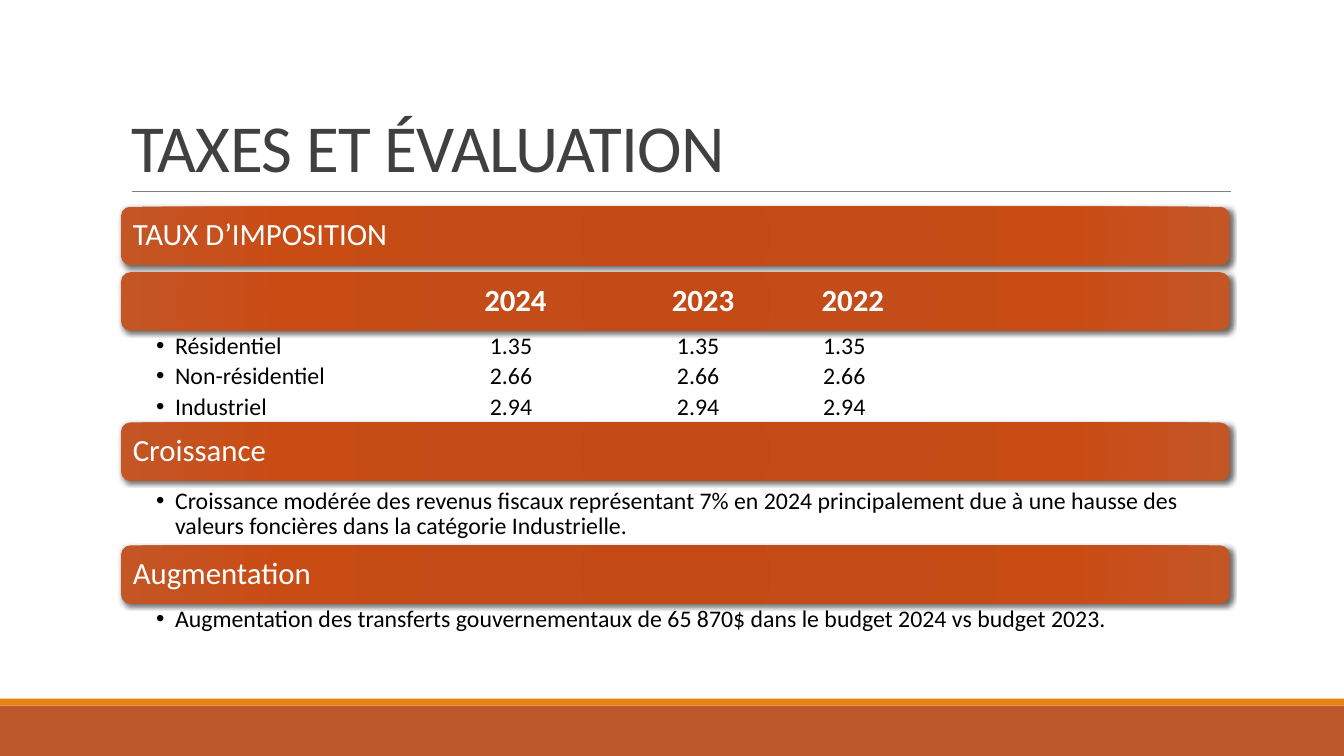
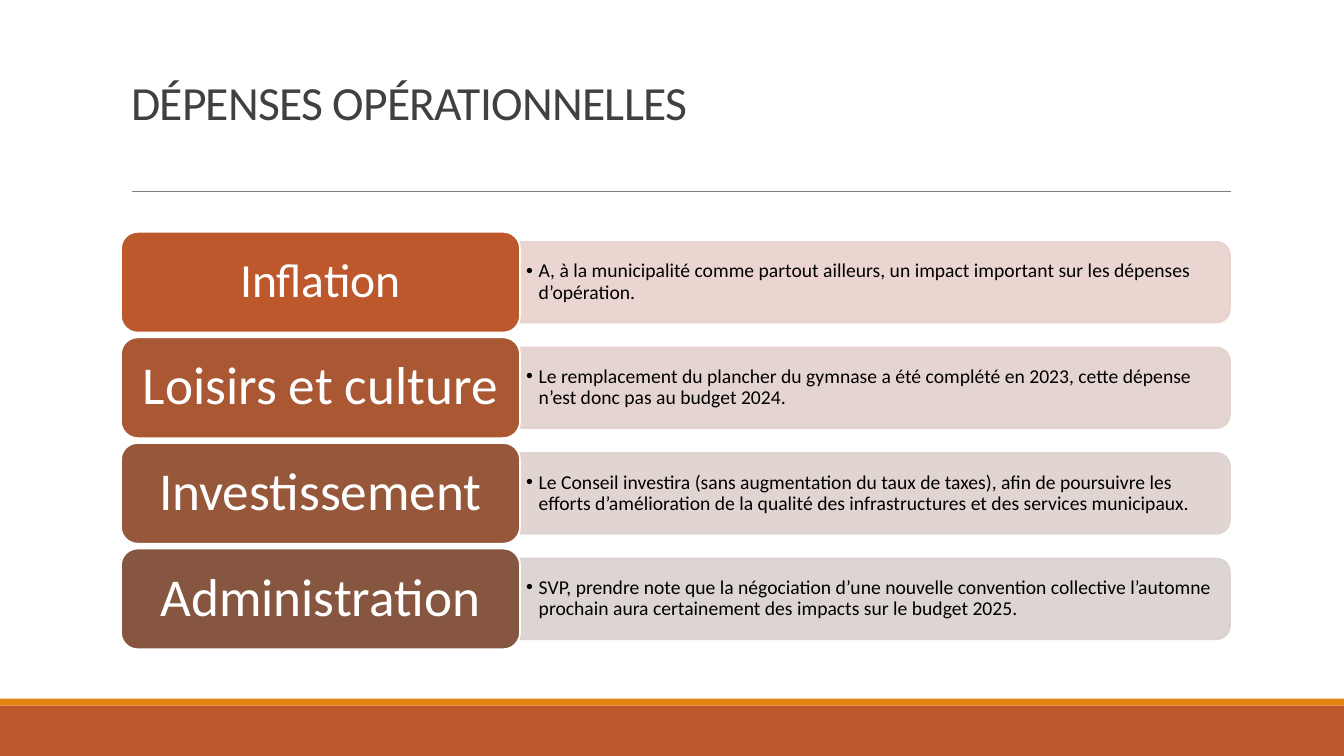
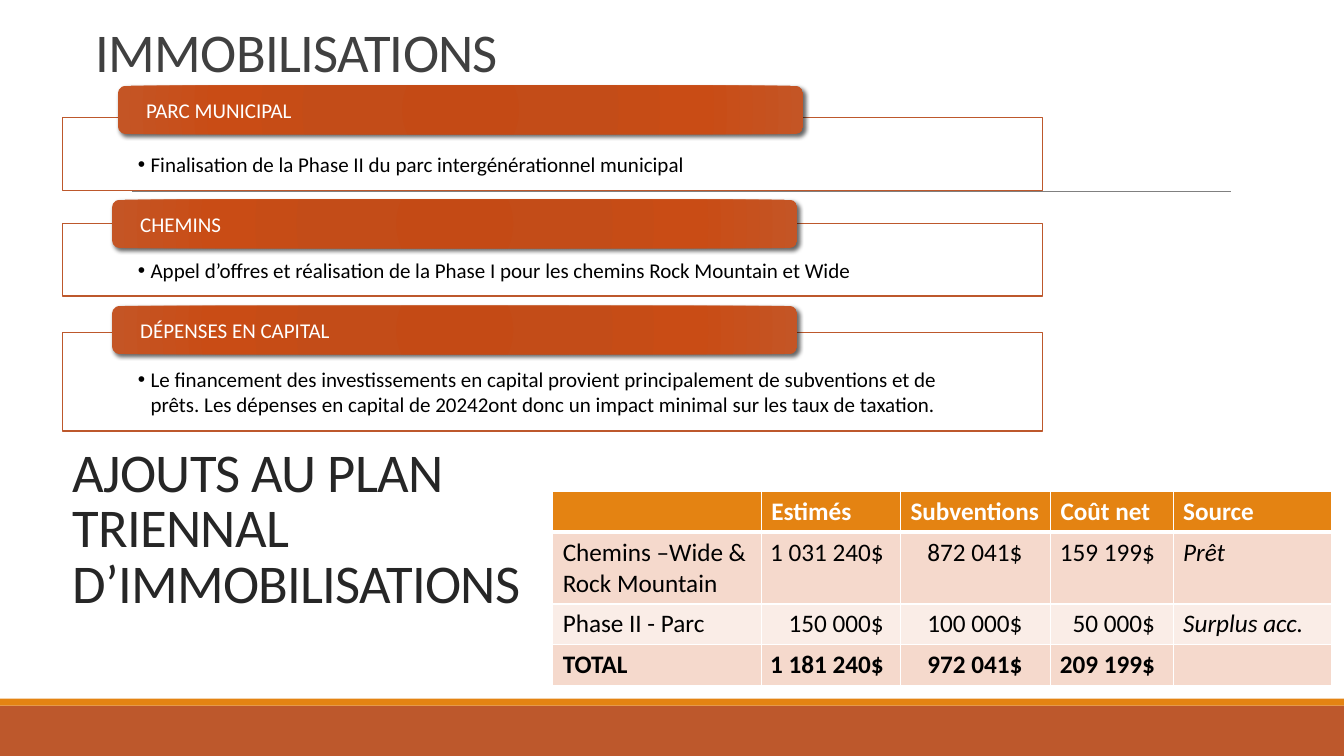
from lxml import etree
from pptx import Presentation
from pptx.dml.color import RGBColor
from pptx.enum.shapes import MSO_CONNECTOR, MSO_SHAPE
from pptx.enum.text import MSO_ANCHOR, MSO_AUTO_SIZE, PP_ALIGN
from pptx.oxml import parse_xml
from pptx.oxml.ns import nsdecls, qn
from pptx.util import Pt

RECT, ROUND = MSO_SHAPE.RECTANGLE, MSO_SHAPE.ROUNDED_RECTANGLE
TWO_ROUND = MSO_SHAPE.ROUND_2_SAME_RECTANGLE
STRAIGHT = MSO_CONNECTOR.STRAIGHT
LEFT, CENTER, RIGHT = PP_ALIGN.LEFT, PP_ALIGN.CENTER, PP_ALIGN.RIGHT
TOP, MIDDLE, BOTTOM = MSO_ANCHOR.TOP, MSO_ANCHOR.MIDDLE, MSO_ANCHOR.BOTTOM
NO_FIT = MSO_AUTO_SIZE.NONE

FONT = "Calibri"
WHITE, BLACK, GRAY, DARK, INK = "FFFFFF", "000000", "808080", "404040", "262626"
RUST, ORANGE = "BD582C", "E48312"
ROW_TINTS = ("F5D9CC", "FAEDE7")
BAR_STOPS = ((0, "C44A15"), (34, "C34C18"), (70, "C94C15"), (100, "C45525"))
TITLE_BOX = (86.4, 22.4, 792, 114.4)


def color(hex_text):
    return RGBColor.from_string(hex_text)


def place(shape, left, top, width, height):
    shape.left, shape.top = Pt(left), Pt(top)
    shape.width, shape.height = Pt(width), Pt(height)


def style_run(span, size, hex_text, bold=False, italic=False, tight=False):
    font = span.font
    font.name, font.size = FONT, Pt(size)
    font.bold, font.italic = bold, italic
    font.color.rgb = color(hex_text)
    if tight:
        span._r.get_or_add_rPr().set("spc", "-50")


def add_bullet(para, indent):
    props = para._p.get_or_add_pPr()
    props.set("marL", str(Pt(indent)))
    props.set("indent", str(-Pt(indent)))
    etree.SubElement(props, qn("a:buFont")).set("typeface", "Arial")
    etree.SubElement(props, qn("a:buChar")).set("char", "•")


def add_tabs(para, stops):
    tab_list = etree.SubElement(para._p.get_or_add_pPr(), qn("a:tabLst"))
    for stop in stops:
        tab = etree.SubElement(tab_list, qn("a:tab"))
        tab.set("pos", str(Pt(stop)))
        tab.set("algn", "l")


def set_opacity(shape, percent):
    """Apply one opacity to the fill and the outline."""
    for node in shape.element.spPr.iter(qn("a:srgbClr")):
        etree.SubElement(node, qn("a:alpha")).set("val", str(percent * 1000))


def add_border(cell, side, width):
    cell._tc.get_or_add_tcPr().append(parse_xml(
        f'<a:{side} {nsdecls("a")} w="{Pt(width)}"><a:solidFill>'
        f'<a:srgbClr val="{WHITE}"/></a:solidFill></a:{side}>'))


class Deck:
    def __init__(self):
        self.deck = Presentation()
        self.deck.slide_width, self.deck.slide_height = Pt(960), Pt(540)
        self.layout = self.deck.slide_layouts[5]
        self.page = None

    def new_page(self, title, size, box=TITLE_BOX, bottom=3.6):
        first = self.page is None
        self.page = self.deck.slides.add_slide(self.layout)
        if first:
            self.decorate_layout()
        holder = self.page.shapes.title
        place(holder, *box)
        self.set_heading(holder, title, size, DARK, bottom)

    def decorate_layout(self):
        """Draw the shared bands and rule, then move them to the layout."""
        shared = (self.shape(RECT, (0, 504, 960, 36), RUST),
                  self.shape(RECT, (0, 499, 960, 5), ORANGE),
                  self.rule(94.3, 879, 136.6))
        for item in shared:
            self.layout.shapes.element.append(item.element)

    def rule(self, start, end, top):
        line = self.page.shapes.add_connector(
            STRAIGHT, Pt(start), Pt(top), Pt(end), Pt(top))
        line.line.color.rgb = color(GRAY)
        line.line.width = Pt(0.5)
        etree.SubElement(line.element.spPr, qn("a:effectLst"))
        return line

    def shape(self, kind, box, fill, line=None, width=1.25):
        item = self.page.shapes.add_shape(kind, *map(Pt, box))
        item.shadow.inherit = False
        item.fill.solid()
        item.fill.fore_color.rgb = color(fill)
        if line:
            item.line.color.rgb = color(line)
            item.line.width = Pt(width)
        else:
            item.line.fill.background()
        return item

    def set_text(self, shape, texts, size, hex_text, insets, anchor=MIDDLE,
                 align=LEFT, leading=0.9, after=0, bullet=0, tabs=(),
                 bold=False, tight=False):
        """Fill a shape with paragraphs; insets are left, top, right, bottom."""
        frame = shape.text_frame
        frame.word_wrap = True
        frame.auto_size = NO_FIT
        frame.vertical_anchor = anchor
        (frame.margin_left, frame.margin_top,
         frame.margin_right, frame.margin_bottom) = map(Pt, insets)
        frame.text = "\n".join(texts)
        for para in frame.paragraphs:
            para.alignment = align
            para.line_spacing = leading
            para.space_before, para.space_after = Pt(0), Pt(after)
            if bullet:
                add_bullet(para, bullet)
            if tabs:
                add_tabs(para, tabs)
            for span in para.runs:
                style_run(span, size, hex_text, bold, tight=tight)

    def set_heading(self, shape, text, size, hex_text, bottom):
        self.set_text(shape, [text], size, hex_text, (7.2, 3.6, 7.2, bottom),
                      BOTTOM, leading=0.85, tight=True)

    def text(self, box, texts, size, insets, **options):
        item = self.page.shapes.add_textbox(*map(Pt, box))
        self.set_text(item, texts, size, BLACK, insets, **options)

    def heading(self, box, text, size, bottom):
        item = self.page.shapes.add_textbox(*map(Pt, box))
        self.set_heading(item, text, size, INK, bottom)

    def bar(self, box, text, size, inset, blur, **options):
        """Glossy rounded bar with a soft shadow."""
        item = self.shape(ROUND, box, RUST)
        props = item.element.spPr
        stops = "".join(f'<a:gs pos="{at * 1000}"><a:srgbClr val="{tone}"/></a:gs>'
                        for at, tone in BAR_STOPS)
        props.replace(props.find(qn("a:solidFill")), parse_xml(
            f'<a:gradFill {nsdecls("a")} rotWithShape="1"><a:gsLst>{stops}</a:gsLst>'
            '<a:path path="circle"><a:fillToRect l="100000" t="100000" '
            'r="100000" b="100000"/></a:path></a:gradFill>'))
        props.find(qn("a:effectLst")).append(parse_xml(
            f'<a:outerShdw {nsdecls("a")} blurRad="{Pt(blur)}" dist="{Pt(2)}" '
            'dir="2700000" rotWithShape="0"><a:srgbClr val="000000">'
            '<a:alpha val="60000"/></a:srgbClr></a:outerShdw>'))
        self.set_text(item, [text], size, WHITE, (inset, 0, inset, 0), **options)

    def side_band(self, left, top, width, height, tint):
        """Band with rounded right corners, made by turning an upright shape."""
        box = (left + (width - height) / 2, top + (height - width) / 2, height, width)
        item = self.shape(TWO_ROUND, box, tint, tint)
        item.rotation = 90
        set_opacity(item, 90)

    def table(self, left, top, widths, heights, rows, right_margins):
        """Header row, tinted rows and a bold last row; right_margins maps
        the columns of amounts to their right margin."""
        table = self.page.shapes.add_table(
            len(rows), len(widths), Pt(left), Pt(top),
            Pt(sum(widths)), Pt(sum(heights))).table
        for column, width in zip(table.columns, widths):
            column.width = Pt(width)
        last = len(rows) - 1
        for r, (height, row) in enumerate(zip(heights, rows)):
            table.rows[r].height = Pt(height)
            for c, text in enumerate(row):
                cell = table.cell(r, c)
                for side in ("lnL", "lnR", "lnT", "lnB"):
                    thick = (r, side) in ((0, "lnB"), (1, "lnT"))
                    add_border(cell, side, 3 if thick else 1)
                cell.fill.solid()
                cell.fill.fore_color.rgb = color(ROW_TINTS[(r + 1) % 2] if r else ORANGE)
                cell.text_frame.text = text
                para = cell.text_frame.paragraphs[0]
                para.font.size = Pt(18)
                if r and c in right_margins:
                    para.alignment = RIGHT
                    cell.margin_right = Pt(right_margins[c])
                    cell.margin_left = Pt(0)
                for span in para.runs:
                    style_run(span, 18, BLACK if r else WHITE, bold=r in (0, last),
                              italic=r > 0 and c == len(row) - 1)


def build_taxes(deck):
    deck.new_page("TAXES ET ÉVALUATION", 48)
    left, width, height = 86.4, 792, 41.8
    bars = ((147.6, "TAUX D’IMPOSITION", {}),
            (194.4, "\t2024\t2023\t2022", {"bold": True, "tabs": (251, 385, 492)}),
            (301.7, "Croissance", {}),
            (389.5, "Augmentation", {}))
    for top, text, options in bars:
        deck.bar((left, top, width, height), text, 22, 6.5, 3.5, **options)
    rates = [f"{name}\t{rate}\t{rate}\t{rate}" for name, rate in (
        ("Résidentiel", "1.35"), ("Non-résidentiel", "2.66"), ("Industriel", "2.94"))]
    bodies = ((236.2, 70, rates, (238.4, 372, 476.4)),
              (347, 42.5, ["Croissance modérée des revenus fiscaux représentant 7% en 2024 "
                           "principalement due à une hausse des valeurs foncières dans la "
                           "catégorie Industrielle."], ()),
              (431.3, 29, ["Augmentation des transferts gouvernementaux de 65 870$ dans le "
                           "budget 2024 vs budget 2023."], ()))
    for top, body_height, texts, tabs in bodies:
        deck.text((left, top, width, body_height), texts, 17, (25.2, 2, 12.2, 2),
                  anchor=TOP, after=3.4, bullet=13.5, tabs=tabs)


def build_expenses(deck):
    deck.new_page("DÉPENSES OPÉRATIONNELLES", 34, bottom=43.6)
    topics = (
        ("Inflation", 34, RUST, "E8D1CD",
         "A, à la municipalité comme partout ailleurs, un impact important sur les "
         "dépenses d’opération."),
        ("Loisirs et culture", 38, "AA5834", "E3D1CD",
         "Le remplacement du plancher du gymnase a été complété en 2023, cette dépense "
         "n’est donc pas au budget 2024."),
        ("Investissement", 38, "97573A", "DED1CE",
         "Le Conseil investira (sans augmentation du taux de taxes), afin de poursuivre "
         "les efforts d’amélioration de la qualité des infrastructures et des services "
         "municipaux."),
        ("Administration", 38, "865640", "D9D1CF",
         "SVP, prendre note que la négociation d’une nouvelle convention collective "
         "l’automne prochain aura certainement des impacts sur le budget 2025."))
    for i, (name, size, fill, tint, note) in enumerate(topics):
        top = 165.6 + 75.4 * i
        deck.side_band(371.5, top + 7.2, 507, 57.6, tint)
        deck.text((371.5, top + 10, 504, 52), [note], 14, (4.3, 2.2, 4.3, 2.2),
                  after=2.1, bullet=9)
        label = deck.shape(ROUND, (86.4, top, 285.1, 72), fill, WHITE)
        deck.set_text(label, [name], size, WHITE, (10, 5, 10, 5), align=CENTER)


def build_assets(deck):
    deck.new_page("IMMOBILISATIONS", 39, (61.2, -51, 792, 114.4))
    projects = (
        (84, 52, 84.2, 61.2, "PARC MUNICIPAL",
         "Finalisation de la Phase II du parc intergénérationnel municipal"),
        (159.6, 52, 80, 142.6, "CHEMINS",
         "Appel d’offres et réalisation de la Phase I pour les chemins Rock Mountain "
         "et Wide"),
        (237.4, 70.6, 80, 218.4, "DÉPENSES EN CAPITAL",
         "Le financement des investissements en capital provient principalement de "
         "subventions et de prêts. Les dépenses en capital de 20242ont donc un impact "
         "minimal sur les taux de taxation."))
    for top, height, bar_left, bar_top, name, note in projects:
        frame = deck.shape(RECT, (44.6, top, 700, height), WHITE, RUST, 1)
        deck.set_text(frame, [note], 15, BLACK, (54, 24.5, 54, 8.6), TOP,
                      leading=1, bullet=9)
        deck.bar((bar_left, bar_top, 489.6, 34.6), name, 15, 18.5, 3, leading=1)
    deck.heading((44.6, 250, 341.3, 290), "AJOUTS AU PLAN TRIENNAL D’IMMOBILISATIONS",
                 39, 101)
    deck.table(394.8, 351, (149, 99.4, 107.2, 87.6, 113.5), (29, 51, 29, 29), (
        ("", "Estimés", "Subventions", "Coût net", "Source"),
        ("Chemins –Wide & Rock Mountain", "1 031 240$", "872 041$", "159 199$", "Prêt"),
        ("Phase II - Parc", "150 000$", "100 000$", "50 000$", "Surplus acc."),
        ("TOTAL", "1 181 240$", "972 041$", "209 199$", "")), {1: 12, 2: 20, 3: 13})


def main():
    deck = Deck()
    build_taxes(deck)
    build_expenses(deck)
    build_assets(deck)
    deck.deck.save("out.pptx")


if __name__ == "__main__":
    main()
